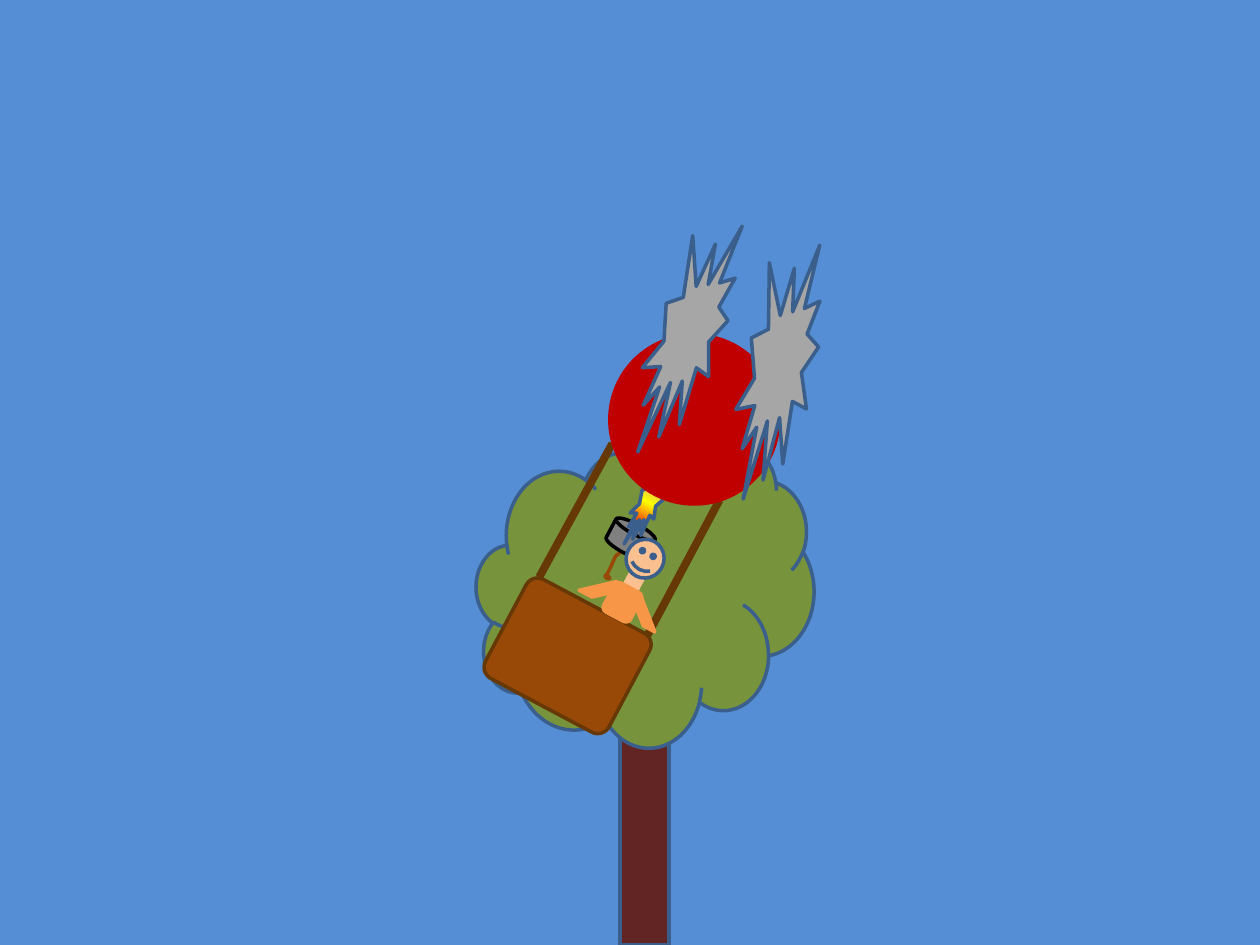
from lxml import etree
from pptx import Presentation
from pptx.dml.color import RGBColor
from pptx.enum.shapes import MSO_CONNECTOR, MSO_SHAPE
from pptx.oxml.ns import qn
from pptx.util import Inches, Pt

STRAIGHT = MSO_CONNECTOR.STRAIGHT
RECTANGLE = MSO_SHAPE.RECTANGLE
ROUNDED = MSO_SHAPE.ROUNDED_RECTANGLE
CLOUD = MSO_SHAPE.CLOUD
OVAL = MSO_SHAPE.OVAL
CYLINDER = MSO_SHAPE.FLOWCHART_MAGNETIC_DISK
BURST = MSO_SHAPE.EXPLOSION1
SMILEY = MSO_SHAPE.SMILEY_FACE
STRIPE = MSO_SHAPE.DIAGONAL_STRIPE

SKY = RGBColor(0x55, 0x8E, 0xD5)
OUTLINE = RGBColor(0x3A, 0x5F, 0x8C)
TRUNK = RGBColor(0x63, 0x25, 0x23)
LEAVES = RGBColor(0x77, 0x93, 0x3C)
ROPE = RGBColor(0x66, 0x38, 0x06)
BASKET = RGBColor(0x98, 0x48, 0x07)
SKIN = RGBColor(0xFA, 0xC0, 0x90)
SHIRT = RGBColor(0xF7, 0x96, 0x46)
METAL = RGBColor(0x80, 0x80, 0x80)
BLACK = RGBColor(0, 0, 0)
BALLOON = RGBColor(0xC0, 0, 0)
SMOKE = RGBColor(0xA6, 0xA6, 0xA6)
FLAME_STOPS = [
    (0, RGBColor(0xE4, 0x6C, 0x0A)),
    (29, RGBColor(0xD3, 0x9F, 0x7C)),
    (49, RGBColor(0xFF, 0xFF, 0)),
    (75, RGBColor(0xFF, 0, 0)),
    (100, RGBColor(0xE1, 0xE8, 0xF5)),
]

TILT = 28  # lean of the crashed balloon, in degrees


def set_outline(shape, color, width=2):
    shape.line.color.rgb = color
    shape.line.width = Pt(width)


def add_shape(slide, kind, bounds, fill, line=OUTLINE, rotation=0, adjust=None):
    shape = slide.shapes.add_shape(kind, *(Inches(length) for length in bounds))
    shape.shadow.inherit = False
    shape.rotation = rotation
    shape.fill.solid()
    shape.fill.fore_color.rgb = fill
    set_outline(shape, line)
    if adjust is not None:
        shape.adjustments[0] = adjust
    return shape


def add_rope(slide, start, end):
    rope = slide.shapes.add_connector(
        STRAIGHT, *(Inches(length) for length in (*start, *end)))
    set_outline(rope, ROPE, 4.5)
    etree.SubElement(rope.line._get_or_add_ln().getparent(), qn("a:effectLst"))


def add_curve(slide, controls, color, steps=12):
    """Draw an open cubic curve through its four control points."""
    points = []
    for step in range(steps + 1):
        t = step / steps
        weights = ((1 - t) ** 3, 3 * t * (1 - t) ** 2, 3 * t * t * (1 - t), t ** 3)
        points.append(tuple(
            Inches(sum(weight * point[axis] for weight, point in zip(weights, controls)))
            for axis in (0, 1)))
    builder = slide.shapes.build_freeform(*points[0])
    builder.add_line_segments(points[1:], close=False)
    curve = builder.convert_to_shape()
    curve.shadow.inherit = False
    curve.fill.background()
    set_outline(curve, color)


def set_gradient(shape, stops):
    """Fill a shape from top to bottom with any number of colour stops."""
    shape.fill.gradient()
    gradient = shape._element.spPr.find(qn("a:gradFill"))
    for child in list(gradient):
        gradient.remove(child)
    stop_list = etree.SubElement(gradient, qn("a:gsLst"))
    for position, color in stops:
        stop = etree.SubElement(stop_list, qn("a:gs"), pos=str(position * 1000))
        etree.SubElement(stop, qn("a:srgbClr"), val=str(color))
    etree.SubElement(gradient, qn("a:lin"), ang="5400000", scaled="0")


def draw_tree(slide):
    add_shape(slide, RECTANGLE, (4.92, 5.64, 0.39, 1.86), TRUNK)
    add_shape(slide, CLOUD, (3.78, 3.52, 2.68, 2.41), LEAVES)


def draw_balloon(slide):
    # Neck, ropes and basket
    add_shape(slide, ROUNDED, (4.97, 4.55, 0.11, 0.15), SKIN, SKIN, TILT)
    add_rope(slide, (4.86, 3.52), (4.28, 4.58))
    add_rope(slide, (5.71, 3.97), (5.14, 5.04))
    add_shape(slide, ROUNDED, (3.95, 4.76, 1.11, 0.89), BASKET, ROPE, TILT, 0.114)

    # Burner with pull cord and flame
    add_curve(slide, [(4.93, 4.38), (4.85, 4.44), (4.91, 4.39), (4.81, 4.57)], BASKET)
    add_shape(slide, OVAL, (4.8, 4.57, 0.04, 0.02), BASKET, BASKET, TILT)
    add_shape(slide, CYLINDER, (4.83, 4.15, 0.35, 0.25), METAL, BLACK, TILT)
    flame = add_shape(slide, BURST, (5.05, 3.63, 0.19, 0.74), SHIRT, rotation=TILT)
    set_gradient(flame, FLAME_STOPS)

    # Envelope
    add_shape(slide, OVAL, (4.84, 2.66, 1.34, 1.34), BALLOON, BALLOON, TILT)


def draw_pilot(slide):
    add_shape(slide, ROUNDED, (4.82, 4.65, 0.24, 0.26), SHIRT, SHIRT, TILT)
    add_shape(slide, SMILEY, (4.97, 4.28, 0.3, 0.31), SKIN, rotation=TILT)
    # Arms
    add_shape(slide, STRIPE, (5.05, 4.77, 0.19, 0.22), SHIRT, SHIRT, TILT + 270, 0.532)
    add_shape(slide, STRIPE, (4.63, 4.55, 0.23, 0.2), SHIRT, SHIRT, TILT + 180)


def draw_smoke(slide):
    add_shape(slide, BURST, (5.2, 1.7, 0.52, 1.97), SMOKE, rotation=20.6)
    add_shape(slide, BURST, (5.91, 1.9, 0.55, 2.1), SMOKE, rotation=12.6)


def main():
    deck = Presentation()
    deck.slide_width, deck.slide_height = Inches(10), Inches(7.5)
    slide = deck.slides.add_slide(deck.slide_layouts[6])
    slide.background.fill.solid()
    slide.background.fill.fore_color.rgb = SKY

    draw_tree(slide)
    draw_balloon(slide)
    draw_pilot(slide)
    draw_smoke(slide)
    deck.save("out.pptx")


if __name__ == "__main__":
    main()
